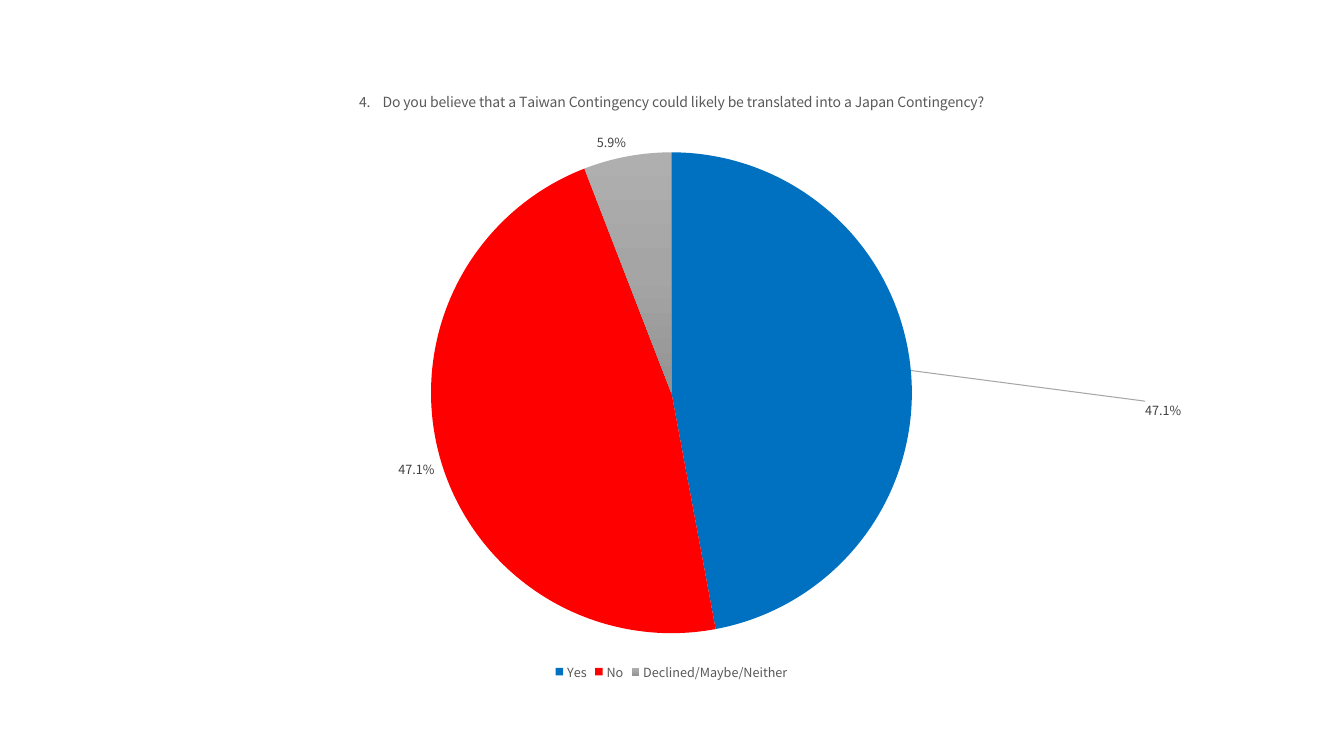
from copy import deepcopy

from lxml import etree
from pptx import Presentation
from pptx.chart.data import CategoryChartData
from pptx.dml.color import RGBColor
from pptx.enum.chart import XL_CHART_TYPE, XL_LABEL_POSITION, XL_LEGEND_POSITION
from pptx.oxml import parse_xml
from pptx.oxml.ns import nsdecls, qn
from pptx.util import Pt

PIE = XL_CHART_TYPE.PIE
OUTSIDE = XL_LABEL_POSITION.OUTSIDE_END
BOTTOM = XL_LEGEND_POSITION.BOTTOM
PX = 9525
FONT = "Noto Sans CJK KR"
QUESTION = ("4.    Do you believe that a Taiwan Contingency could likely "
            "be translated into a Japan Contingency?")
ANSWERS = {"Yes": 0.471, "No": 0.471, "Declined/Maybe/Neither": 0.059}
GREYS = [(0, "AFAFAF"), (0.5, "A5A5A5"), (1, "939393")]


def style(font, size, color):
    font.name = FONT
    font.size = Pt(size)
    font.bold = False
    font.color.rgb = RGBColor.from_string(color)


def layout(**parts):
    """Return a manual c:layout holding the given settings in order."""
    root = parse_xml(f"<c:layout {nsdecls('c')}><c:manualLayout/></c:layout>")
    for name, val in parts.items():
        etree.SubElement(root[0], qn("c:" + name)).set("val", str(val))
    return root


prs = Presentation()
prs.slide_width, prs.slide_height = 1280 * PX, 720 * PX
slide = prs.slides.add_slide(prs.slide_layouts[6])

data = CategoryChartData(number_format="0.0%")
data.categories = list(ANSWERS)
data.add_series(QUESTION, list(ANSWERS.values()))
frame = slide.shapes.add_chart(PIE, 67 * PX, 67 * PX, 1145 * PX, 585 * PX, data)
chart = frame.chart
style(chart.font, 10, "000000")

# Title and legend
chart.has_title = True
title = chart.chart_title.text_frame
title.text = QUESTION
style(title.paragraphs[0].runs[0].font, 10, "595959")
chart.chart_title.include_in_layout = False
chart.has_legend = True
chart.legend.position = BOTTOM
chart.legend.include_in_layout = False
style(chart.legend.font, 9, "595959")

# Pie area
area = chart.plots[0]
area.vary_by_categories = True
plot = chart.element.find(".//" + qn("c:plotArea"))
for old in plot.findall(qn("c:layout")):
    plot.remove(old)
plot.insert(0, layout(layoutTarget="inner", xMode="edge", yMode="edge",
                      x=0.3, y=0.13, w=0.4, h=0.79))

# Slices
pie = area.series[0]
for i, color in enumerate(["0070C0", "FF0000"]):
    fill = pie.points[i].format.fill
    fill.solid()
    fill.fore_color.rgb = RGBColor.from_string(color)
fill = pie.points[2].format.fill
fill.gradient()
fill.gradient_angle = 270
stops = chart.element.find(".//" + qn("a:gsLst"))
stops.append(deepcopy(stops[0]))
for stop, (pos, color) in zip(fill.gradient_stops, GREYS):
    stop.position = pos
    stop.color.rgb = RGBColor.from_string(color)

# Labels, the first pulled out on a leader line
labels = pie.data_labels
labels.show_value = True
labels.number_format = "0.0%"
labels.number_format_is_linked = False
labels.position = OUTSIDE
style(labels.font, 9, "404040")
label = pie.points[0].data_label
style(label.font, 9, "404040")
label.position = OUTSIDE
far = chart.element.find(".//" + qn("c:dLbl"))
far.insert(1, layout(x=0.19, y=0.08))
far.insert(2, parse_xml(f'<c:numFmt {nsdecls("c")} formatCode="0.0%" sourceLinked="0"/>'))
group = far.getparent()
lead = group.find(qn("c:showLeaderLines"))
if lead is None:
    lead = etree.SubElement(group, qn("c:showLeaderLines"))
lead.set("val", "1")
lead.addnext(parse_xml(
    f'<c:leaderLines {nsdecls("c", "a")}><c:spPr><a:ln w="9525"><a:solidFill>'
    '<a:srgbClr val="A6A6A6"/></a:solidFill></a:ln></c:spPr></c:leaderLines>'))

prs.save("out.pptx")
